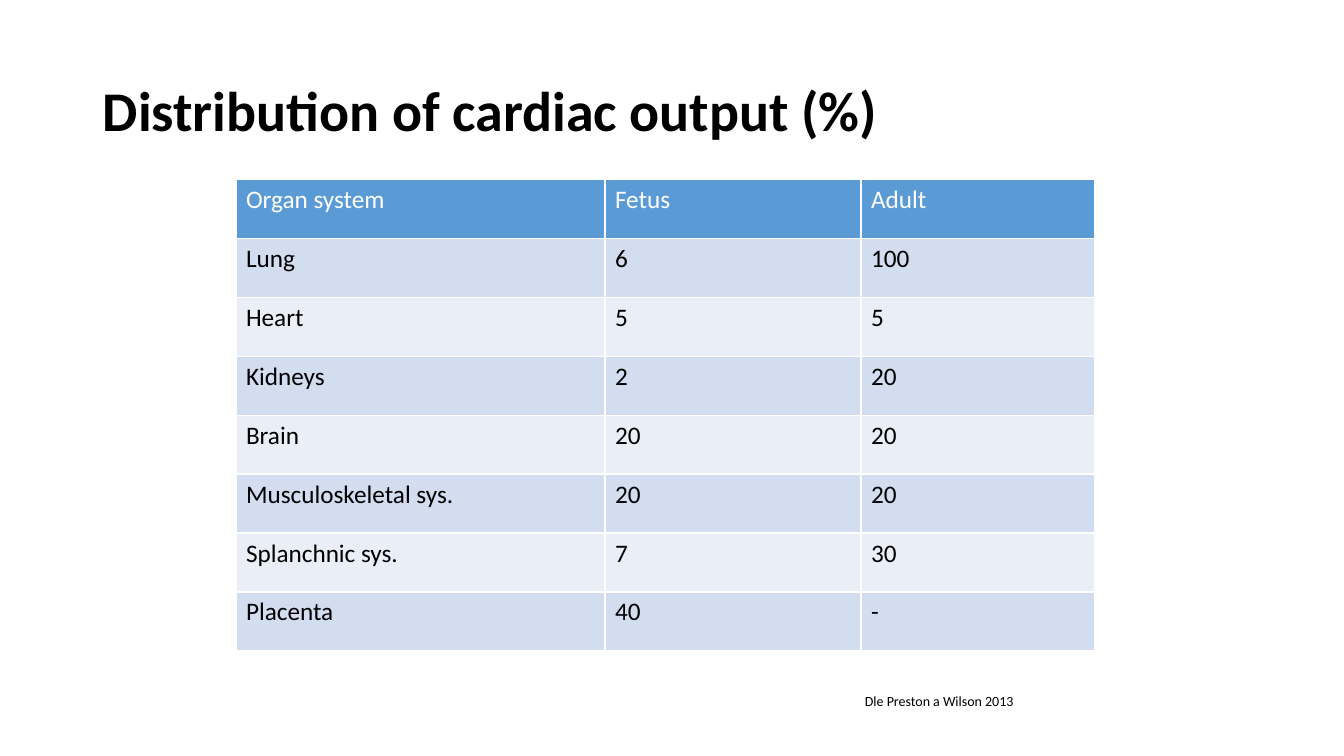
from dataclasses import dataclass

from pptx import Presentation
from pptx.dml.color import RGBColor
from pptx.enum.text import MSO_ANCHOR, PP_ALIGN
from pptx.util import Inches, Pt

TITLE = "Distribution of cardiac output (%)"
SOURCE_NOTE = "Dle Preston a Wilson 2013"
ROWS = [
    ("Organ system", "Fetus", "Adult"),
    ("Lung", "6", "100"),
    ("Heart", "5", "5"),
    ("Kidneys", "2", "20"),
    ("Brain", "20", "20"),
    ("Musculoskeletal sys.", "20", "20"),
    ("Splanchnic sys.", "7", "30"),
    ("Placenta", "40", "-"),
]

SLIDE_SIZE = (13.33, 7.5)
TITLE_BOX = (0.92, 0.4, 11.5, 1.45)
NOTE_BOX = (8.48, 6.82, 2.36, 0.27)
TABLE_ORIGIN = (2.34, 1.78)
COLUMN_WIDTHS = (3.66, 2.54, 2.32)
ROW_HEIGHT = 4.68 / len(ROWS)


@dataclass(frozen=True)
class Theme:
    font: str = "Calibri"
    ink: str = "000000"
    header_ink: str = "FFFFFF"
    header_fill: str = "5B9BD5"
    bands: tuple = ("D2DEEF", "EAEFF7")
    title_size: int = 40
    table_size: int = 18
    note_size: int = 10


THEME = Theme()


def write(frame, text, size, color=THEME.ink, bold=False):
    frame.text = text
    para = frame.paragraphs[0]
    para.alignment = PP_ALIGN.LEFT
    font = para.runs[0].font
    font.name, font.size, font.bold = THEME.font, Pt(size), bold
    font.color.rgb = RGBColor.from_string(color)
    return para


def add_title(page):
    title = page.shapes.title
    title.left, title.top, title.width, title.height = map(Inches, TITLE_BOX)
    title.text_frame.vertical_anchor = MSO_ANCHOR.MIDDLE
    para = write(title.text_frame, TITLE, THEME.title_size, bold=True)
    para.line_spacing = 0.9


def add_output_table(page):
    size = (sum(COLUMN_WIDTHS), ROW_HEIGHT * len(ROWS))
    table = page.shapes.add_table(
        len(ROWS), len(COLUMN_WIDTHS), *map(Inches, TABLE_ORIGIN + size)
    ).table
    for column, width in zip(table.columns, COLUMN_WIDTHS):
        column.width = Inches(width)
    for index, values in enumerate(ROWS):
        table.rows[index].height = Inches(ROW_HEIGHT)
        if index == 0:
            fill, ink = THEME.header_fill, THEME.header_ink
        else:
            fill, ink = THEME.bands[(index - 1) % 2], THEME.ink
        for cell, value in zip(table.rows[index].cells, values):
            cell.fill.solid()
            cell.fill.fore_color.rgb = RGBColor.from_string(fill)
            write(cell.text_frame, value, THEME.table_size, ink)


def add_source_note(page):
    box = page.shapes.add_textbox(*map(Inches, NOTE_BOX))
    box.text_frame.word_wrap = True
    write(box.text_frame, SOURCE_NOTE, THEME.note_size)


def main():
    deck = Presentation()
    deck.slide_width, deck.slide_height = map(Inches, SLIDE_SIZE)
    page = deck.slides.add_slide(deck.slide_layouts.get_by_name("Title Only"))
    add_title(page)
    add_output_table(page)
    add_source_note(page)
    deck.save("out.pptx")


if __name__ == "__main__":
    main()
